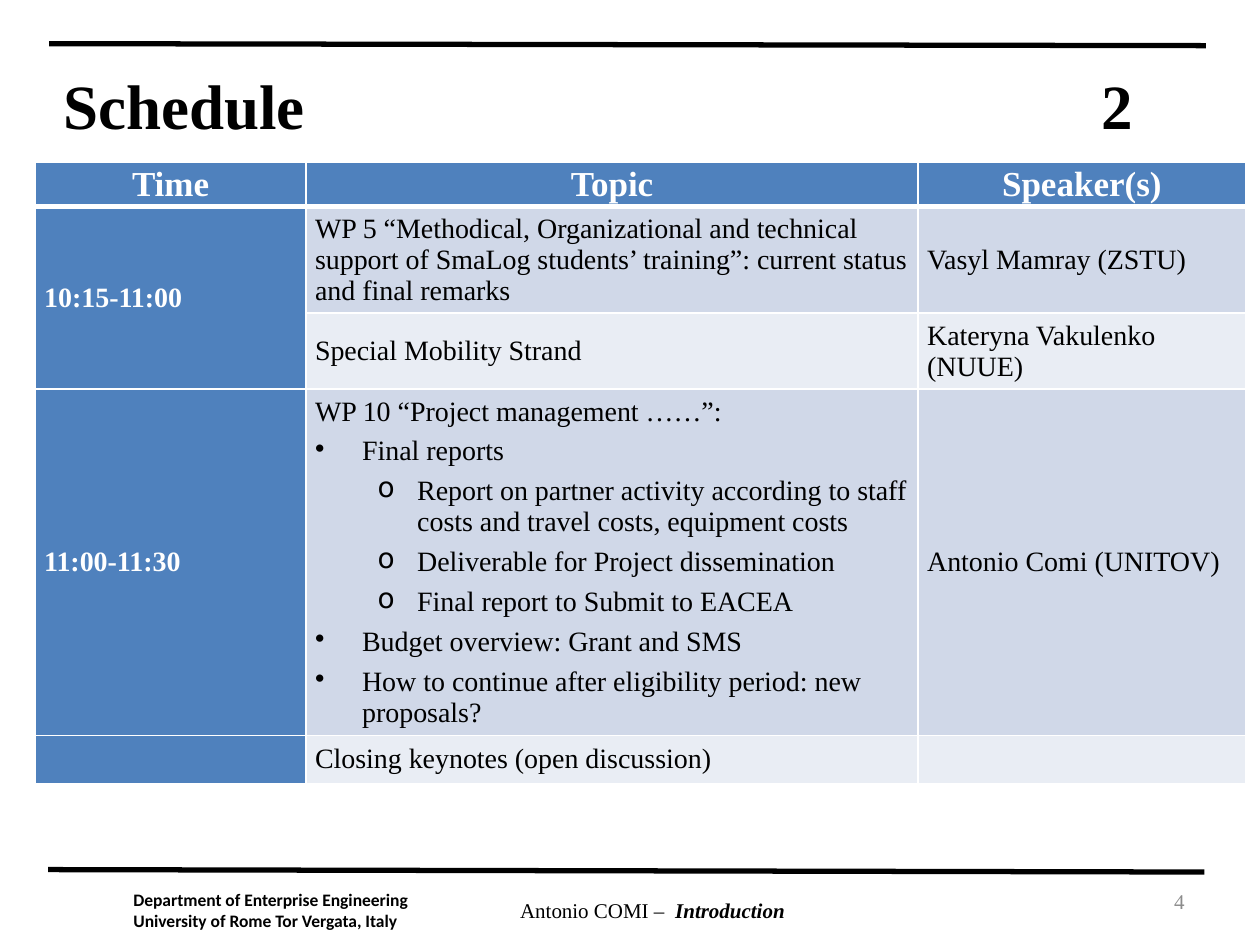
from dataclasses import dataclass

from lxml import etree
from pptx import Presentation
from pptx.dml.color import RGBColor
from pptx.enum.shapes import MSO_CONNECTOR
from pptx.enum.text import MSO_ANCHOR, PP_ALIGN
from pptx.oxml.ns import qn
from pptx.util import Cm, Pt

LEFT, CENTER, RIGHT = PP_ALIGN.LEFT, PP_ALIGN.CENTER, PP_ALIGN.RIGHT
MIDDLE = MSO_ANCHOR.MIDDLE
STRAIGHT = MSO_CONNECTOR.STRAIGHT


@dataclass(frozen=True)
class Theme:
    serif: str = "Times New Roman"
    sans: str = "Calibri"
    black: str = "000000"
    white: str = "FFFFFF"
    grey: str = "8C8C8C"
    accent: str = "4F81BD"
    band_dark: str = "D0D8E8"
    band_light: str = "E9EDF4"
    title: int = 36
    header: int = 20
    body: int = 16
    footer: int = 12
    small: int = 10


T = Theme()


def add_text(p, text, size=T.body, font=T.serif, color=T.black, bold=False,
             italic=False, align=LEFT, after=0, bullet=None, margin=0, hang=0):
    """Append a formatted run to p and set the paragraph's layout."""
    if bullet:
        pPr = p._p.get_or_add_pPr()
        pPr.set("marL", str(margin))
        pPr.set("indent", str(-hang))
        etree.SubElement(pPr, qn("a:buChar"), char=bullet)
    p.alignment = align
    p.space_before, p.space_after = Pt(0), Pt(after)
    r = p.add_run()
    r.text = text
    r.font.size, r.font.name = Pt(size), font
    r.font.bold, r.font.italic = bold, italic
    r.font.color.rgb = RGBColor.from_string(color)


def format_cell(cell, fill, bottom=1, pad=Cm(0.13)):
    cell.vertical_anchor = MIDDLE
    cell.margin_left = cell.margin_right = Cm(0.18)
    cell.margin_top = cell.margin_bottom = pad
    tcPr = cell._tc.get_or_add_tcPr()
    for side, width in (("L", 1), ("R", 1), ("T", 1), ("B", bottom)):
        ln = etree.SubElement(tcPr, qn(f"a:ln{side}"), w=str(Pt(width)))
        solid = etree.SubElement(ln, qn("a:solidFill"))
        etree.SubElement(solid, qn("a:srgbClr"), val=T.white)
    cell.fill.solid()
    cell.fill.fore_color.rgb = RGBColor.from_string(fill)


prs = Presentation()
prs.slide_width, prs.slide_height = Cm(25.4), Cm(19.05)
s = prs.slides.add_slide(prs.slide_layouts[5])

# Rules above the title and above the footer
for x1, y1, x2, y2 in ((0.97, 17.53, 24.28, 17.58), (0.99, 0.88, 24.31, 0.92)):
    rule = s.shapes.add_connector(STRAIGHT, Cm(x1), Cm(y1), Cm(x2), Cm(y2))
    rule.line.width = Pt(3)
    rule.line.color.rgb = RGBColor.from_string(T.black)
    etree.SubElement(rule._element.spPr, qn("a:effectLst"))

# Title with the part number at a tab stop
title = s.shapes.title
title.left, title.top, title.width, title.height = Cm(1.02), Cm(1.09), Cm(23.27), Cm(2.03)
tf = title.text_frame
tf.vertical_anchor = MIDDLE
p = tf.paragraphs[0]
tabs = etree.SubElement(p._p.get_or_add_pPr(), qn("a:tabLst"))
etree.SubElement(tabs, qn("a:tab"), pos=str(Cm(20.93)), algn="l")
add_text(p, "Schedule \t2", size=T.title, bold=True)

# Schedule table
DOT = dict(bullet="•", margin=Cm(0.95), hang=Cm(0.95))
RING = dict(bullet="o", margin=Cm(2.06), hang=Cm(0.8))
management = [
    ("WP 10 “Project management ……”:", {}),
    ("Final reports", DOT),
    ("Report on partner activity according to staff costs and travel costs, equipment costs", RING),
    ("Deliverable for Project dissemination", RING),
    ("Final report to Submit to EACEA", RING),
    ("Budget overview: Grant and SMS", DOT),
    ("How to continue after eligibility period: new proposals?", DOT),
]
wp5 = ("WP 5 “Methodical, Organizational and technical support of SmaLog students’ "
       "training”: current status and final remarks")
rows = [
    ("10:15-11:00", [(wp5, {})], "Vasyl Mamray (ZSTU)"),
    ("", [("Special Mobility Strand", {})], "Kateryna Vakulenko (NUUE)"),
    ("11:00-11:30", management, "Antonio Comi (UNITOV)"),
    ("", [("Closing keynotes (open discussion)", {})], ""),
]
col_widths = (5.46, 12.34, 6.6)
row_heights = (0.85, 2.15, 1.53, 6.98, 0.9)
table = s.shapes.add_table(len(row_heights), len(col_widths), Cm(0.71), Cm(3.28),
                           Cm(sum(col_widths)), Cm(sum(row_heights))).table
for col, width in zip(table.columns, col_widths):
    col.width = Cm(width)
for row, height in zip(table.rows, row_heights):
    row.height = Cm(height)

for c, heading in enumerate(("Time", "Topic", "Speaker(s)")):
    cell = table.cell(0, c)
    format_cell(cell, T.accent, bottom=3, pad=Cm(0.05))
    add_text(cell.text_frame.paragraphs[0], heading, size=T.header, color=T.white,
             bold=True, align=CENTER)

for i, (time, topics, speaker) in enumerate(rows, start=1):
    band = T.band_dark if i % 2 else T.band_light
    time_cell, topic_cell, speaker_cell = table.rows[i].cells
    format_cell(time_cell, T.accent)
    format_cell(topic_cell, band)
    format_cell(speaker_cell, band)
    add_text(time_cell.text_frame.paragraphs[0], time, color=T.white, bold=True)
    add_text(speaker_cell.text_frame.paragraphs[0], speaker)
    tf = topic_cell.text_frame
    for n, (text, style) in enumerate(topics):
        p = tf.add_paragraph() if n else tf.paragraphs[0]
        add_text(p, text, after=5, **style)
table.cell(1, 0).merge(table.cell(2, 0))

# Footer: department, speaker, page number
tf = s.shapes.add_textbox(Cm(2.69), Cm(17.93), Cm(6.55), Cm(0.84)).text_frame
tf.word_wrap = True
tf.margin_left = tf.margin_top = tf.margin_right = tf.margin_bottom = 0
department = dict(size=T.small, font=T.sans, bold=True)
add_text(tf.paragraphs[0], "Department of Enterprise Engineering", **department)
add_text(tf.add_paragraph(), "University of Rome Tor Vergata, Italy", **department)

tf = s.shapes.add_textbox(Cm(8.1), Cm(17.96), Cm(10.11), Cm(1.27)).text_frame
tf.word_wrap = True
p = tf.paragraphs[0]
add_text(p, "Antonio COMI –  ", size=T.footer, align=CENTER)
add_text(p, "Introduction", size=T.footer, bold=True, italic=True, align=CENTER)

tf = s.shapes.add_textbox(Cm(18.21), Cm(17.65), Cm(5.92), Cm(1.02)).text_frame
tf.word_wrap = True
tf.vertical_anchor = MIDDLE
add_text(tf.paragraphs[0], "4", size=T.footer, color=T.grey, align=RIGHT)

prs.save("out.pptx")
